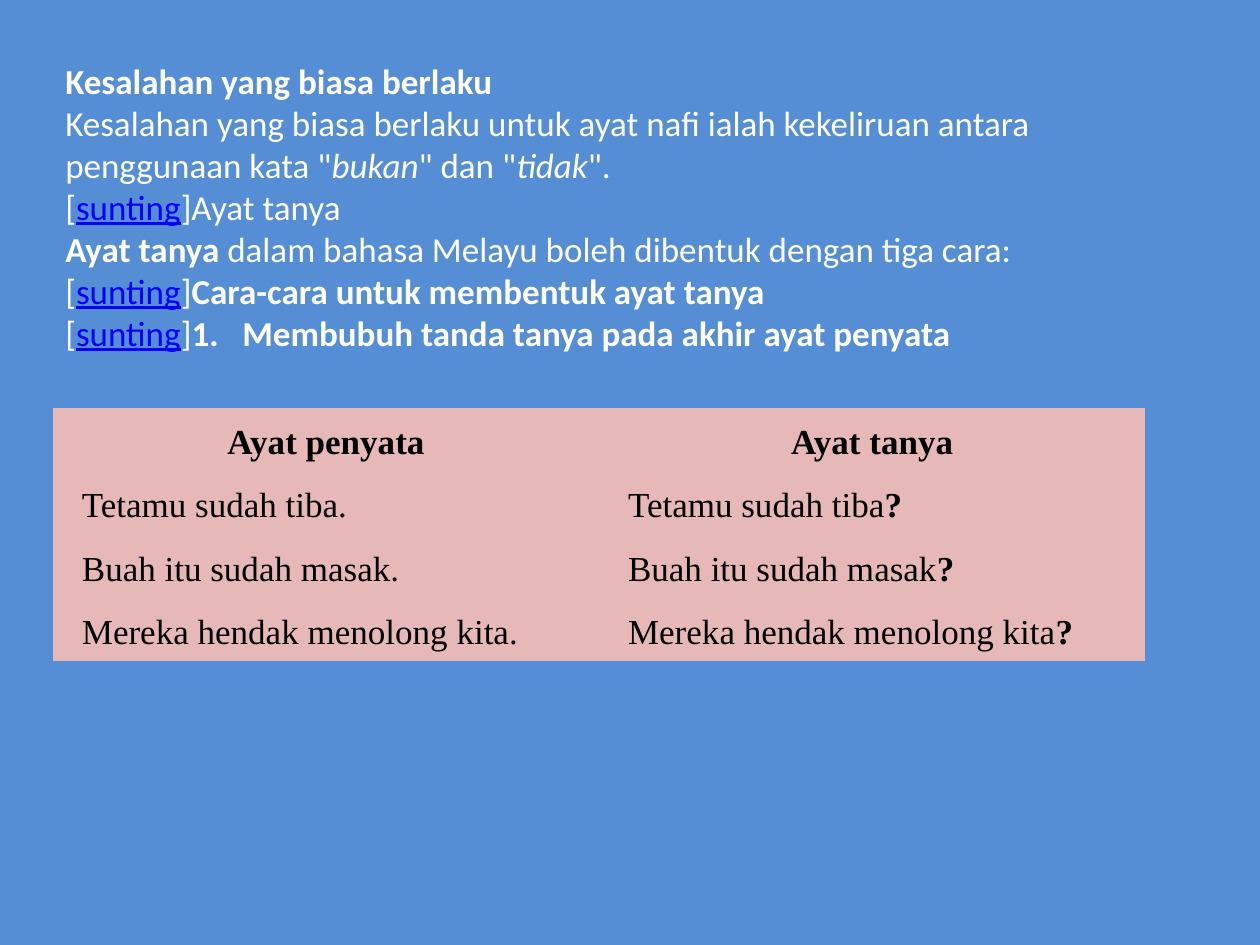
"""Build a slide on common mistakes and question sentences in Malay."""
from pptx import Presentation
from pptx.dml.color import RGBColor
from pptx.enum.text import MSO_ANCHOR, PP_ALIGN
from pptx.util import Inches, Pt

BLUE = RGBColor(0x55, 0x8E, 0xD5)
WHITE = RGBColor(0xFF, 0xFF, 0xFF)
BLACK = RGBColor(0x00, 0x00, 0x00)
LINK = RGBColor(0x00, 0x00, 0xFF)
PINK = RGBColor(0xE6, 0xB9, 0xB8)
MIDDLE = MSO_ANCHOR.MIDDLE
CENTER, LEFT = PP_ALIGN.CENTER, PP_ALIGN.LEFT
NO_GRID = "{2D5ABB26-0587-4C30-8999-92F81FD0307C}"


def style_paragraph(p, name, color):
    p.font.name = name
    p.font.size = Pt(20)
    p.font.color.rgb = color


def add_run(p, text, style=""):
    r = p.add_run()
    r.text = text
    if style == "bold":
        r.font.bold = True
    elif style == "italic":
        r.font.italic = True
    elif style == "link":
        r.font.underline = True
        r.font.color.rgb = LINK


prs = Presentation()
prs.slide_width, prs.slide_height = Inches(10), Inches(7.5)
s = prs.slides.add_slide(prs.slide_layouts[6])
s.background.fill.solid()
s.background.fill.fore_color.rgb = BLUE

edit_link = [("[",), ("sunting", "link")]
paragraphs = [
    [("Kesalahan yang biasa berlaku", "bold")],
    [("Kesalahan yang biasa berlaku untuk ayat nafi ialah kekeliruan antara "
      'penggunaan kata "',), ("bukan", "italic"), ('" dan "',),
     ("tidak", "italic"), ('".',)],
    edit_link + [("]Ayat tanya",)],
    [("Ayat tanya ", "bold"),
     ("dalam bahasa Melayu boleh dibentuk dengan tiga cara:",)],
    edit_link + [("]",), ("Cara-cara untuk membentuk ayat tanya", "bold")],
    edit_link + [("]",),
                 ("1.   Membubuh tanda tanya pada akhir ayat penyata", "bold")],
]
sp = s.shapes.add_textbox(Inches(0.42), Inches(0.42), Inches(8.83), Inches(3.13))
tf = sp.text_frame
tf.word_wrap = True
for i, runs in enumerate(paragraphs):
    p = tf.add_paragraph() if i else tf.paragraphs[0]
    style_paragraph(p, "Calibri", WHITE)
    for run in runs:
        add_run(p, *run)

sentences = ["Tetamu sudah tiba", "Buah itu sudah masak", "Mereka hendak menolong kita"]
rows = [[[("Ayat penyata", "bold")], [("Ayat tanya", "bold")]]]
rows += [[[(text + ".",)], [(text,), ("?", "bold")]] for text in sentences]

table = s.shapes.add_table(
    len(rows), 2, Inches(0.42), Inches(3.24), Inches(8.67), Inches(2.01)).table
table._tbl.tblPr[0].text = NO_GRID
table.first_row = False
table.horz_banding = False
for i, row in enumerate(rows):
    for j, runs in enumerate(row):
        cell = table.cell(i, j)
        cell.fill.solid()
        cell.fill.fore_color.rgb = PINK
        cell.vertical_anchor = MIDDLE
        side = 0.23 if i else (0.17, 0.01)[j]
        cell.margin_left = cell.margin_right = Inches(side)
        cell.margin_top = cell.margin_bottom = Inches(0.02)
        p = cell.text_frame.paragraphs[0]
        p.alignment = LEFT if i else CENTER
        p.line_spacing = 1.15
        style_paragraph(p, "Times New Roman", BLACK)
        for run in runs:
            add_run(p, *run)

prs.save("out.pptx")
